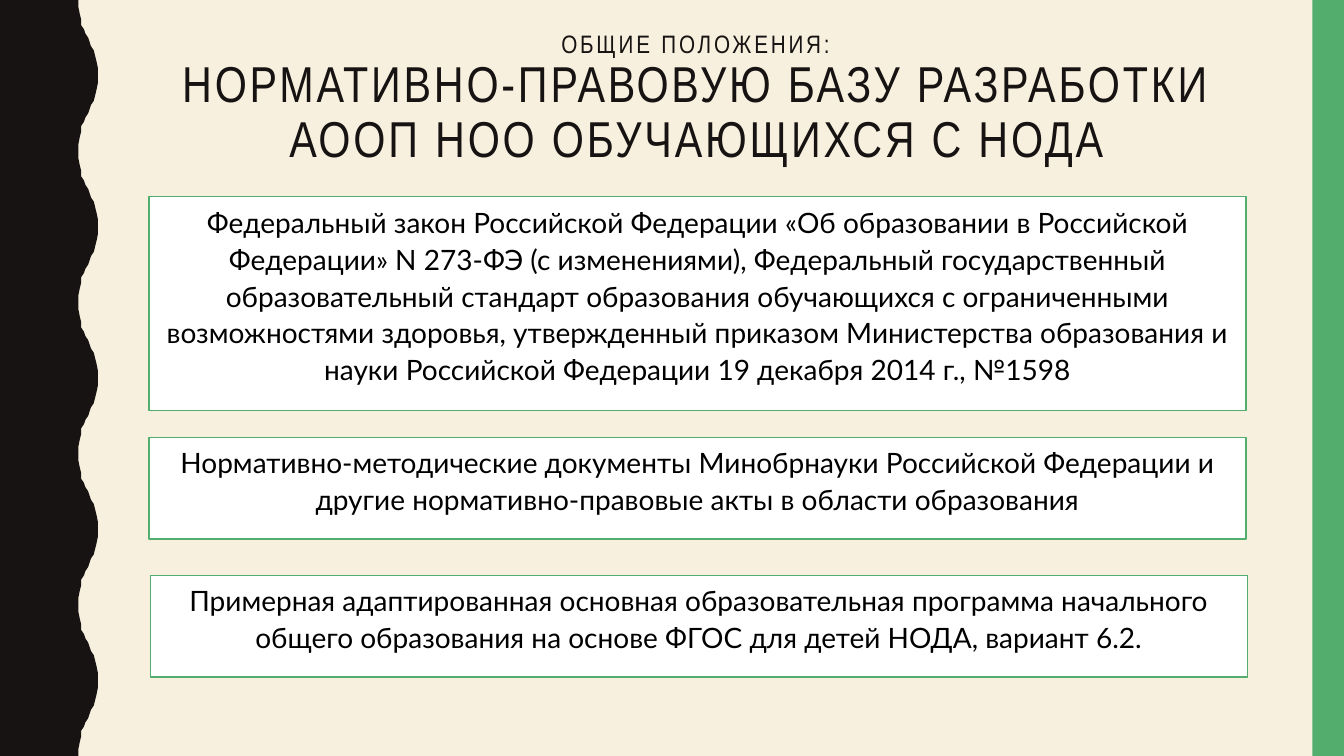
from dataclasses import dataclass

from lxml import etree
from pptx import Presentation
from pptx.dml.color import RGBColor
from pptx.enum import shapes, text
from pptx.oxml import ns
from pptx.util import Pt


@dataclass(frozen=True)
class Theme:
    cream: str = "F7F0DF"
    dark: str = "171312"
    green: str = "53AE6E"
    white: str = "FFFFFF"
    black: str = "000000"
    title_font: str = "Arial Narrow"
    body_font: str = "Lato"
    kicker_size: float = 18
    title_size: float = 36
    body_size: float = 20


WIDTH, HEIGHT = 960, 540
WAVE_PERIOD = 108
# One half of a wave, from its trough to its crest: (x, y)
HALF_WAVE = [
    (56.2, 0), (56.2, 5), (56.8, 10), (57.6, 14.4), (58.5, 18),
    (60, 21), (61.3, 24), (62.7, 27), (64, 30), (65.4, 33),
    (67, 36), (68.4, 39.6), (69.2, 44), (69.8, 49), (69.8, 54),
]


class SlideBuilder:
    def __init__(self, slide, theme):
        self.slide = slide
        self.theme = theme

    def background(self):
        self.fill(self.slide.background, self.theme.cream)

    def fill(self, part, color):
        part.fill.solid()
        part.fill.fore_color.rgb = RGBColor.from_string(color)

    def place(self, shape, left, top, width, height):
        shape.left, shape.top = Pt(left), Pt(top)
        shape.width, shape.height = Pt(width), Pt(height)

    def rectangle(self, left, top, width, height, color):
        rect = self.slide.shapes.add_shape(
            shapes.MSO_SHAPE.RECTANGLE, Pt(left), Pt(top), Pt(width), Pt(height))
        rect.shadow.inherit = False
        self.fill(rect, color)
        rect.line.fill.background()
        return rect

    def wavy_edge(self):
        rising = HALF_WAVE[1:]
        falling = [(x, WAVE_PERIOD - y) for x, y in HALF_WAVE[-2::-1]]
        edge = [(x, start + y)
                for start in range(0, HEIGHT, WAVE_PERIOD)
                for x, y in rising + falling]
        outline = [HALF_WAVE[0], *edge, (0, HEIGHT)]
        builder = self.slide.shapes.build_freeform(0, 0, scale=Pt(1))
        builder.add_line_segments(outline, close=True)
        wave = builder.convert_to_shape()
        wave.shadow.inherit = False
        self.fill(wave, self.theme.dark)
        wave.line.fill.background()

    def frame(self, shape):
        frame = shape.text_frame
        frame.word_wrap = True
        frame.auto_size = text.MSO_AUTO_SIZE.NONE
        frame.vertical_anchor = text.MSO_ANCHOR.TOP
        return frame

    def font(self, paragraph, name, size, color):
        paragraph.font.name = name
        paragraph.font.size = Pt(size)
        paragraph.font.color.rgb = RGBColor.from_string(color)

    def title(self, kicker, heading, box):
        title = self.slide.shapes.title
        self.place(title, *box)
        paragraph = self.frame(title).paragraphs[0]
        paragraph.alignment = text.PP_ALIGN.CENTER
        paragraph.line_spacing = 0.9
        self.font(paragraph, self.theme.title_font,
                  self.theme.kicker_size, self.theme.dark)
        kicker_run = paragraph.add_run()
        kicker_run.text = kicker
        paragraph.add_line_break()
        heading_run = paragraph.add_run()
        heading_run.text = heading
        kicker_run.font.size = Pt(self.theme.kicker_size)
        heading_run.font.size = Pt(self.theme.title_size)
        # Letter spacing of 2 pt
        for properties in paragraph._p.iter(ns.qn("a:rPr")):
            properties.set("spc", "200")

    def card(self, shape, wording):
        self.fill(shape, self.theme.white)
        shape.line.color.rgb = RGBColor.from_string(self.theme.green)
        shape.line.width = Pt(1)
        paragraph = self.frame(shape).paragraphs[0]
        paragraph.text = wording
        paragraph.alignment = text.PP_ALIGN.CENTER
        paragraph.line_spacing = 1.1
        paragraph.space_before = Pt(7)
        # No bullet and no indent
        properties = paragraph._p.get_or_add_pPr()
        properties.set("marL", "0")
        properties.set("indent", "0")
        etree.SubElement(properties, ns.qn("a:buNone"))
        self.font(paragraph, self.theme.body_font,
                  self.theme.body_size, self.theme.black)

    def body_card(self, wording, box):
        body = self.slide.placeholders[1]
        self.place(body, *box)
        self.card(body, wording)

    def extra_card(self, wording, box):
        self.card(self.rectangle(*box, self.theme.white), wording)


def main():
    deck = Presentation()
    deck.slide_width, deck.slide_height = Pt(WIDTH), Pt(HEIGHT)
    theme = Theme()
    page = SlideBuilder(deck.slides.add_slide(deck.slide_layouts[1]), theme)

    # Backdrop and side bands
    page.background()
    page.wavy_edge()
    page.rectangle(937.5, 0, 22.5, HEIGHT, theme.green)

    # Heading
    page.title("ОБЩИЕ ПОЛОЖЕНИЯ:",
               "НОРМАТИВНО-ПРАВОВУЮ БАЗУ РАЗРАБОТКИ АООП НОО ОБУЧАЮЩИХСЯ С НОДА",
               (97.2, 19.4, 801.4, 72.7))

    # Legal documents
    page.body_card(
        "Федеральный закон Российской Федерации «Об образовании в Российской "
        "Федерации» N 273-ФЭ (с изменениями), Федеральный государственный "
        "образовательный стандарт образования обучающихся с ограниченными "
        "возможностями здоровья, утвержденный приказом Министерства образования "
        "и науки Российской Федерации 19 декабря 2014 г., №1598",
        (106.5, 140.5, 783.5, 152.6))
    page.extra_card(
        "Нормативно-методические документы Минобрнауки Российской Федерации и "
        "другие нормативно-правовые акты в области образования",
        (106.5, 312.3, 783.5, 72.7))
    page.extra_card(
        "Примерная адаптированная основная образовательная программа начального "
        "общего образования на основе ФГОС для детей НОДА, вариант 6.2.",
        (107.5, 411, 783.5, 72.7))

    deck.save("out.pptx")


if __name__ == "__main__":
    main()
